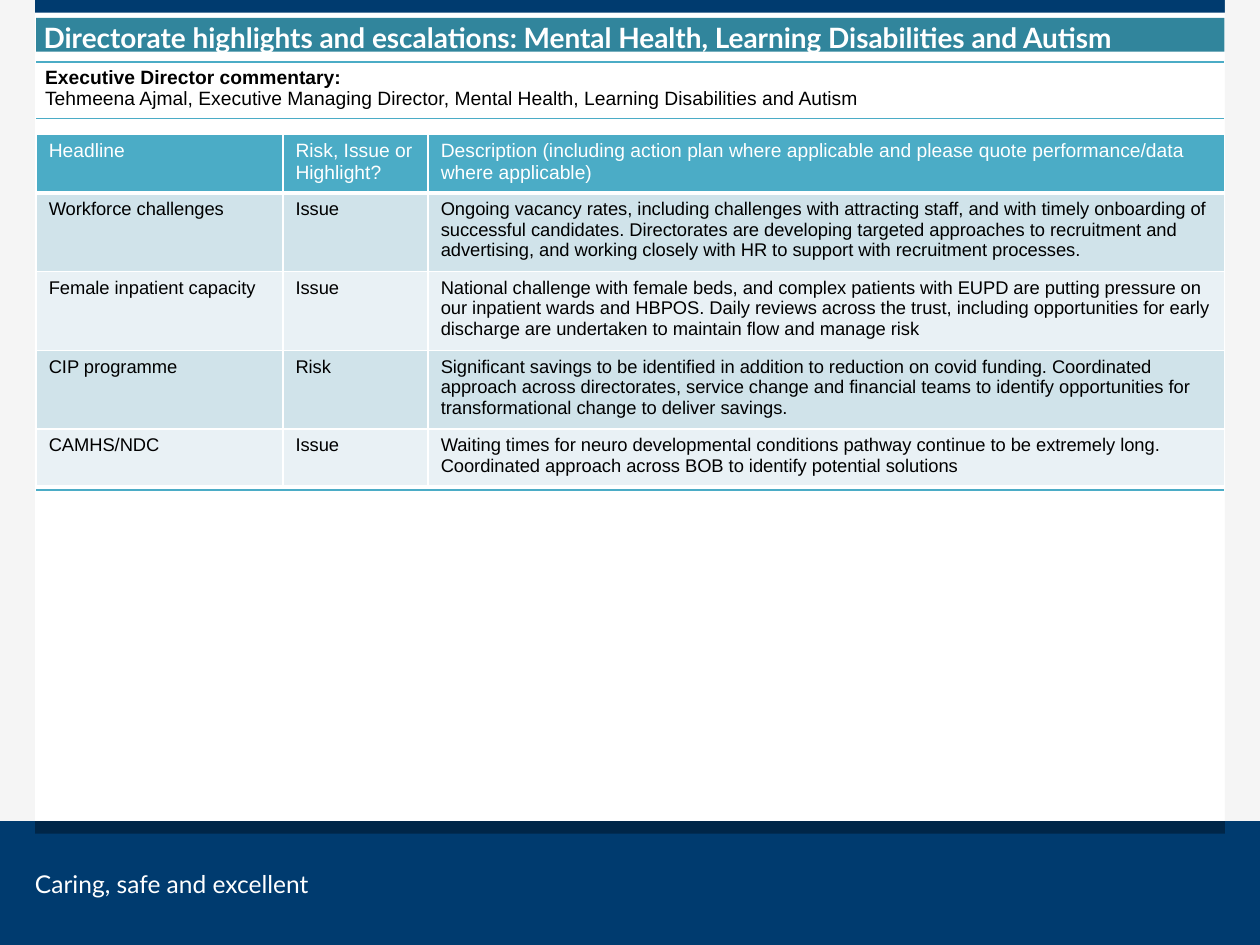
from typing import NamedTuple

from lxml import etree
from pptx import Presentation
from pptx import util as u
from pptx.dml.color import RGBColor
from pptx.enum import shapes, text
from pptx.oxml.ns import qn

COLORS = {
    "navy": "003B6F", "shade": "002648", "margin": "F5F5F5", "title": "31859C",
    "header": "4BACC6", "odd": "D0E3EA", "even": "E9F1F5",
    "white": "FFFFFF", "black": "000000",
}
WIDTH, HEIGHT = 720, 540
MARGIN, FOOTER_TOP, BAR = 20, 469.2, 7.2
INNER = WIDTH - 2 * MARGIN
LEFT, TABLE_WIDTH = 20.7, 679


class Panel(NamedTuple):
    x: float
    y: float
    w: float
    h: float
    color: str


class Style(NamedTuple):
    size: float
    color: str
    font: str = "Arial"
    bold: bool = False


class Item(NamedTuple):
    headline: str
    kind: str
    description: str


PANELS = [
    Panel(0, 0, MARGIN, FOOTER_TOP, "margin"),
    Panel(0, FOOTER_TOP, WIDTH, HEIGHT - FOOTER_TOP, "navy"),
    Panel(MARGIN, FOOTER_TOP, INNER, BAR, "shade"),
    Panel(MARGIN, 0, INNER, BAR, "navy"),
    Panel(WIDTH - MARGIN, 0, MARGIN, FOOTER_TOP, "margin"),
]
TITLE = Panel(LEFT, 10.2, TABLE_WIDTH, 19.4, "title")
COMMENTARY = [
    ("Executive Director commentary:", True),
    ("Tehmeena Ajmal, Executive Managing Director, Mental Health, Learning Disabilities and Autism", False),
]
ITEMS = [
    Item("Headline", "Risk, Issue or Highlight?",
         "Description (including action plan where applicable and please quote "
         "performance/data where applicable)"),
    Item("Workforce challenges", "Issue",
         "Ongoing vacancy rates, including challenges with attracting staff, and with timely "
         "onboarding of successful candidates. Directorates are developing targeted approaches to "
         "recruitment and advertising, and working closely with HR to support with recruitment processes."),
    Item("Female inpatient capacity", "Issue",
         "National challenge with female beds, and complex patients with EUPD are putting pressure "
         "on our inpatient wards and HBPOS. Daily reviews across the trust, including opportunities "
         "for early discharge are undertaken to maintain flow and manage risk"),
    Item("CIP programme", "Risk",
         "Significant savings to be identified in addition to reduction on covid funding. Coordinated "
         "approach across directorates, service change and financial teams to identify opportunities "
         "for transformational change to deliver savings."),
    Item("CAMHS/NDC", "Issue",
         "Waiting times for neuro developmental conditions pathway continue to be extremely long. "
         "Coordinated approach across BOB to identify potential solutions"),
]


def rgb(name: str) -> RGBColor:
    return RGBColor.from_string(COLORS[name])


def write(p, content: str, style: Style) -> None:
    p.text = content
    for r in p.runs:
        r.font.size, r.font.name, r.font.bold = u.Pt(style.size), style.font, style.bold
        r.font.color.rgb = rgb(style.color)


def set_margins(target, x: float, y: float) -> None:
    target.margin_left = target.margin_right = u.Pt(x)
    target.margin_top = target.margin_bottom = u.Pt(y)


def add_panel(s, panel: Panel):
    sp = s.shapes.add_shape(shapes.MSO_SHAPE.RECTANGLE, *map(u.Pt, panel[:4]))
    sp.shadow.inherit = False
    sp.fill.solid()
    sp.fill.fore_color.rgb = rgb(panel.color)
    sp.line.fill.background()
    return sp


def add_grid(s, top: float, widths: list[float], heights: list[float]):
    tbl = s.shapes.add_table(len(heights), len(widths), u.Pt(LEFT), u.Pt(top),
                             u.Pt(sum(widths)), u.Pt(sum(heights))).table
    tbl.first_row = tbl.horz_banding = False
    for col, w in zip(tbl.columns, widths):
        col.width = u.Pt(w)
    for row, h in zip(tbl.rows, heights):
        row.height = u.Pt(h)
    return tbl


def fill_cell(cell, color: str) -> None:
    cell.fill.solid()
    cell.fill.fore_color.rgb = rgb(color)


def set_borders(cell, **edges: tuple[str, float]) -> None:
    """Draw the given edges (L, R, T, B) and hide the others."""
    pr = cell._tc.get_or_add_tcPr()
    for i, side in enumerate("LRTB"):
        ln = etree.Element(qn(f"a:ln{side}"))
        if side in edges:
            color, width = edges[side]
            ln.set("w", str(u.Pt(width)))
            fill = etree.SubElement(ln, qn("a:solidFill"))
            etree.SubElement(fill, qn("a:srgbClr"), val=COLORS[color])
        else:
            etree.SubElement(ln, qn("a:noFill"))
        pr.insert(i, ln)


def add_title(s) -> None:
    tf = add_panel(s, TITLE).text_frame
    tf.word_wrap = True
    tf.vertical_anchor = text.MSO_ANCHOR.MIDDLE
    set_margins(tf, 4.3, 2.2)
    p = tf.paragraphs[0]
    write(p, "Directorate highlights and escalations: Mental Health, Learning Disabilities and Autism",
          Style(16, "white", "Lato", True))
    p.alignment = text.PP_ALIGN.LEFT
    p.line_spacing, p.space_after = 1.15, u.Pt(5.6)


def add_footer(s) -> None:
    tf = s.shapes.add_textbox(u.Pt(MARGIN), u.Pt(496.8), u.Pt(221), u.Pt(17.3)).text_frame
    tf.word_wrap = True
    set_margins(tf, 0, 0)
    write(tf.paragraphs[0], "Caring, safe and excellent", Style(14, "white", "Lato"))


def add_commentary(s) -> None:
    tbl = add_grid(s, 35.4, [TABLE_WIDTH], [32, 212.4])
    head, body = tbl.cell(0, 0), tbl.cell(1, 0)
    rule = ("header", 1)
    head.fill.background()
    set_margins(head, 5.1, 2.9)
    tf = head.text_frame
    for i, (line, bold) in enumerate(COMMENTARY):
        p = tf.add_paragraph() if i else tf.paragraphs[0]
        write(p, line, Style(11, "black", bold=bold))
    fill_cell(body, "white")
    set_borders(head, T=rule, B=rule)
    set_borders(body, T=rule, B=rule)


def add_highlights(s) -> None:
    tbl = add_grid(s, 76.6, [141, 83, 455], [33, 45, 45, 45, 32.4])
    thin, thick = ("white", 1), ("white", 3)
    for i, item in enumerate(ITEMS):
        style = Style(10.5, "black") if i else Style(11, "white")
        color = ("even", "odd")[i % 2] if i else "header"
        for j, content in enumerate(item):
            cell = tbl.cell(i, j)
            write(cell.text_frame.paragraphs[0], content, style)
            fill_cell(cell, color)
            set_borders(cell, L=thin, R=thin, T=thick if i == 1 else thin, B=thin if i else thick)


def main() -> None:
    prs = Presentation()
    prs.slide_width, prs.slide_height = u.Pt(WIDTH), u.Pt(HEIGHT)
    s = prs.slides.add_slide(prs.slide_layouts[6])
    for panel in PANELS:
        add_panel(s, panel)
    add_footer(s)
    add_title(s)
    add_commentary(s)
    add_highlights(s)
    prs.save("out.pptx")


if __name__ == "__main__":
    main()
